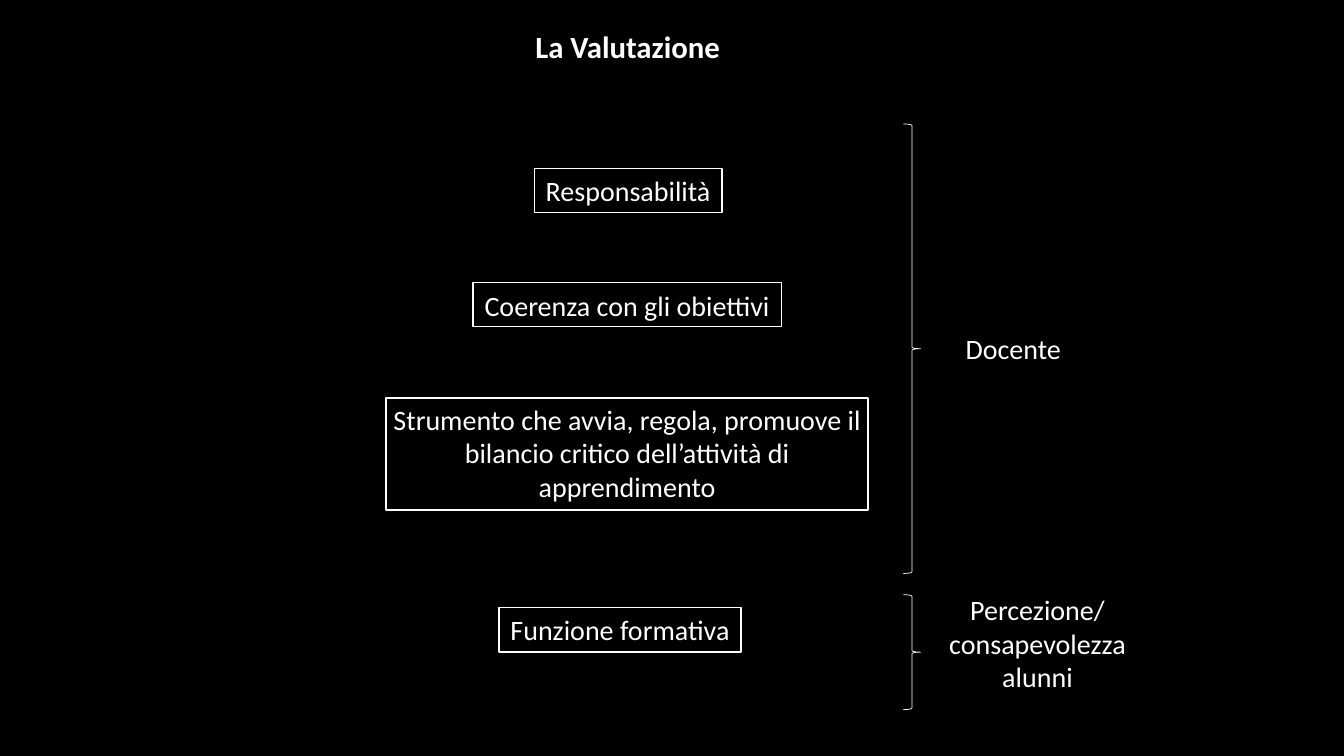
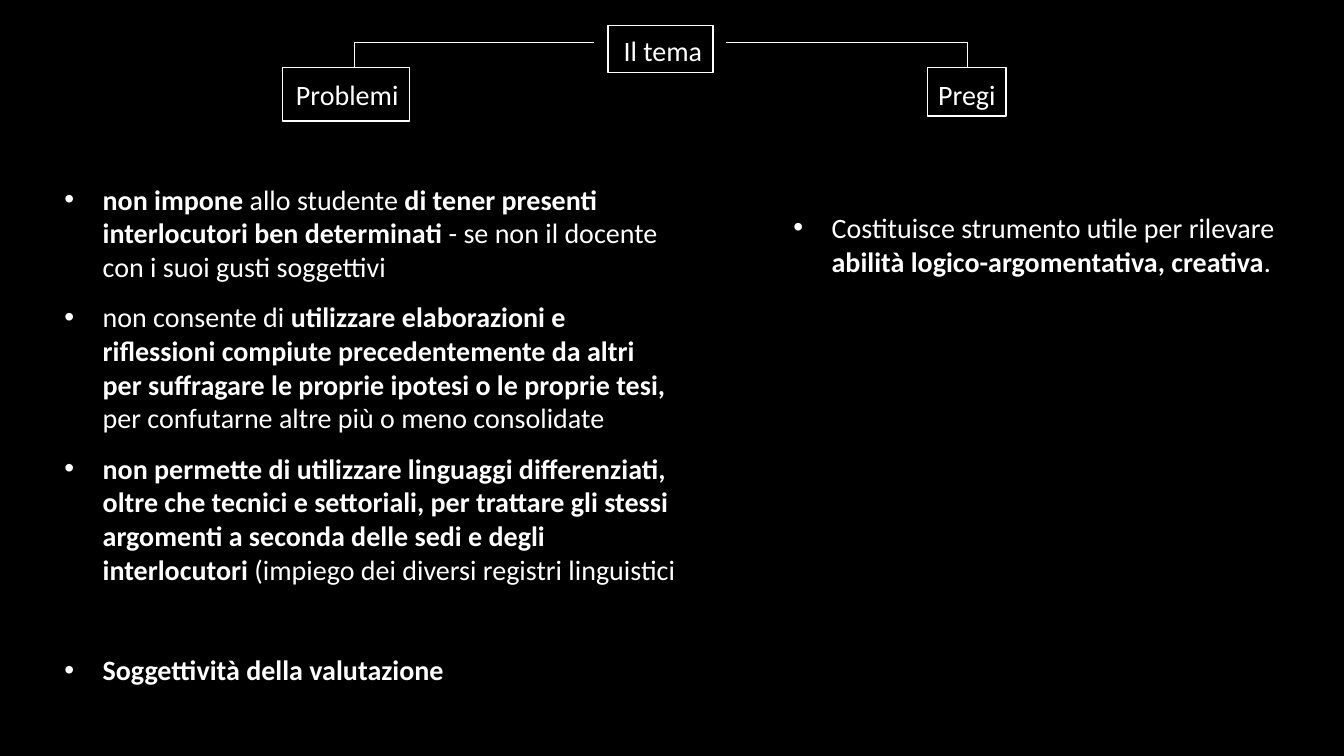
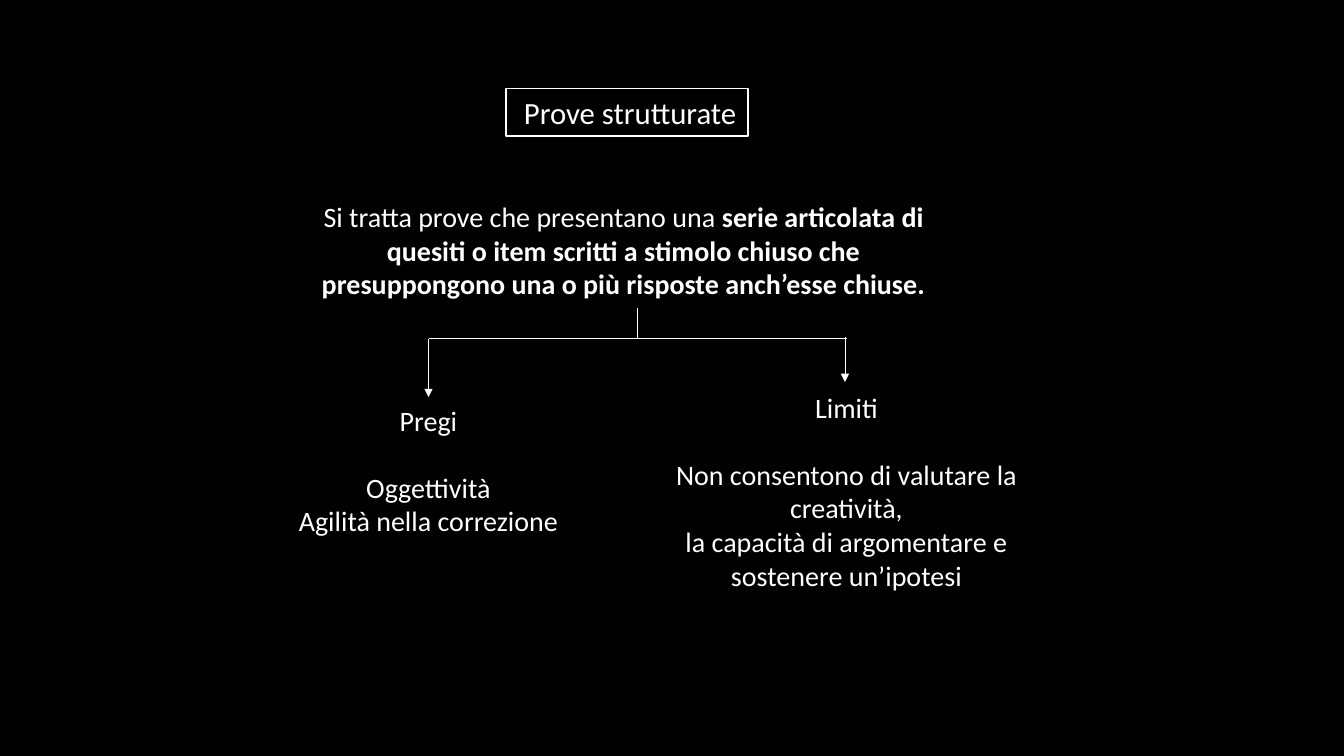
from dataclasses import dataclass

from pptx import Presentation, util as u
from pptx.dml.color import RGBColor
from pptx.enum import shapes, text
from pptx.oxml.ns import qn
from lxml import etree

EMU_PER_PX = 9144
BACKGROUND = "000000"
INK = "FFFFFF"
FONT = "Calibri"
BODY_SIZE = 20
TITLE_SIZE = 22
BLANK_LINE = 24
BULLET_INDENT = 38
FRAME_WIDTH = 1
THIN_WIDTH = 0.5


@dataclass(frozen=True)
class Box:
    left: int
    top: int
    width: int
    height: int


@dataclass(frozen=True)
class Run:
    text: str
    bold: bool = False


@dataclass(frozen=True)
class Paragraph:
    runs: tuple[Run, ...]
    space_before: int = 0
    bullet: bool = False


@dataclass(frozen=True)
class Label:
    box: Box
    text: str
    text_top: int = 5
    text_left: int = 0


@dataclass(frozen=True)
class Title:
    label: Label
    size: int = TITLE_SIZE
    bold: bool = False
    framed: bool = True


@dataclass(frozen=True)
class Line:
    start: tuple[int, int]
    end: tuple[int, int]
    arrow: bool = False


def px(length: int) -> u.Emu:
    return u.Emu(length * EMU_PER_PX)


def colour(value: str) -> RGBColor:
    return RGBColor.from_string(value)


def place(box: Box) -> tuple:
    return px(box.left), px(box.top), px(box.width), px(box.height)


def plain(words: str, space_before: int = 0) -> Paragraph:
    return Paragraph((Run(words),), space_before)


def bullet(*runs: Run, space_before: int = 0) -> Paragraph:
    return Paragraph(runs, space_before, True)


def set_outline(line, width: float) -> None:
    line.color.rgb = colour(INK)
    line.width = u.Pt(width)


def write(frame, paragraphs, size: int = BODY_SIZE, centred: bool = True) -> None:
    frame.word_wrap = True
    frame.auto_size = text.MSO_AUTO_SIZE.NONE
    frame.vertical_anchor = text.MSO_ANCHOR.TOP
    for index, content in enumerate(paragraphs):
        paragraph = frame.add_paragraph() if index else frame.paragraphs[0]
        paragraph.alignment = text.PP_ALIGN.CENTER if centred else text.PP_ALIGN.LEFT
        if content.bullet:
            properties = paragraph._p.get_or_add_pPr()
            properties.set("marL", str(px(BULLET_INDENT)))
            properties.set("indent", str(-px(BULLET_INDENT)))
            etree.SubElement(properties, qn("a:buFont"), typeface="Arial")
            etree.SubElement(properties, qn("a:buChar"), char="•")
        if content.space_before:
            paragraph.space_before = u.Pt(content.space_before)
        for part in content.runs:
            run = paragraph.add_run()
            run.text = part.text
            run.font.name = FONT
            run.font.size = u.Pt(size)
            run.font.bold = part.bold
            run.font.color.rgb = colour(INK)


def write_label(shape, label: Label, size: int = BODY_SIZE, bold: bool = False) -> None:
    frame = shape.text_frame
    frame.margin_left = px(label.text_left)
    frame.margin_top = px(label.text_top)
    frame.margin_right = frame.margin_bottom = 0
    write(frame, [Paragraph((Run(label.text, bold),))], size)


def add_slide(presentation, title: Title):
    slide = presentation.slides.add_slide(presentation.slide_layouts[5])
    shape = slide.shapes.title
    shape.left, shape.top, shape.width, shape.height = place(title.label.box)
    write_label(shape, title.label, title.size, title.bold)
    if title.framed:
        set_outline(shape.line, FRAME_WIDTH)
    return slide


def add_outline(slide, kind, box: Box, width: float):
    shape = slide.shapes.add_shape(kind, *place(box))
    shape.shadow.inherit = False
    shape.fill.background()
    set_outline(shape.line, width)
    return shape


def add_label(slide, label: Label):
    shape = add_outline(slide, shapes.MSO_SHAPE.RECTANGLE, label.box, FRAME_WIDTH)
    write_label(shape, label)
    return shape


def add_text(slide, box: Box, paragraphs, centred: bool = True) -> None:
    write(slide.shapes.add_textbox(*place(box)).text_frame, paragraphs, centred=centred)


def add_line(slide, line: Line):
    connector = slide.shapes.add_connector(
        shapes.MSO_CONNECTOR.STRAIGHT, *map(px, line.start + line.end)
    )
    set_outline(connector.line, THIN_WIDTH)
    if line.arrow:
        etree.SubElement(connector.line._get_or_add_ln(), qn("a:tailEnd"), type="triangle")
    etree.SubElement(connector._element.spPr, qn("a:effectLst"))
    return connector


def build_assessment(presentation) -> None:
    title = Title(Label(Box(520, 22, 205, 47), "La Valutazione"), bold=True, framed=False)
    slide = add_slide(presentation, title)
    for label in (
        Label(Box(530, 167, 186, 44), "Responsabilità"),
        Label(Box(469, 280, 306, 44), "Coerenza con gli obiettivi", 6),
        Label(
            Box(383, 395, 478, 111),
            "Strumento che avvia, regola, promuove il bilancio critico "
            "dell’attività di apprendimento",
            4,
        ),
        Label(Box(495, 603, 240, 44), "Funzione formativa"),
    ):
        add_label(slide, label)
    for top, height in ((123, 446), (590, 114)):
        add_outline(slide, shapes.MSO_SHAPE.RIGHT_BRACE, Box(896, top, 17, height), THIN_WIDTH)
    add_text(slide, Box(937, 324, 136, 44), [plain("Docente")])
    pupils = [plain(words) for words in ("Percezione/", "consapevolezza", "alunni")]
    add_text(slide, Box(862, 583, 334, 111), pupils)


def build_essay(presentation) -> None:
    title = Title(Label(Box(603, 25, 104, 47), "Il tema", 8, 5), BODY_SIZE)
    slide = add_slide(presentation, title)
    add_label(slide, Label(Box(280, 67, 126, 53), "Problemi", 10, 3))
    merits = add_label(slide, Label(Box(920, 67, 78, 48), "Pregi", 10))
    for line in (
        Line((351, 42), (589, 42)),
        Line((351, 42), (351, 67)),
        Line((720, 42), (959, 42)),
    ):
        add_line(slide, line)
    add_line(slide, Line((959, 42), (959, 67))).end_connect(merits, 0)
    problems = [
        bullet(
            Run("non impone ", True),
            Run("allo studente "),
            Run("di tener presenti interlocutori ben determinati", True),
            Run(" - se non il docente con i suoi gusti soggettivi"),
        ),
        bullet(
            Run("non consente di "),
            Run(
                "utilizzare elaborazioni e riflessioni compiute precedentemente da altri "
                "per suffragare le proprie ipotesi o le proprie tesi,",
                True,
            ),
            Run(" per confutarne altre più o meno consolidate"),
            space_before=12,
        ),
        bullet(
            Run(
                "non permette di utilizzare linguaggi differenziati, oltre che tecnici e "
                "settoriali, per trattare gli stessi argomenti a seconda delle sedi e degli "
                "interlocutori",
                True,
            ),
            Run(" (impiego dei diversi registri linguistici"),
            space_before=12,
        ),
        bullet(Run("Soggettività della valutazione", True), space_before=BLANK_LINE + 24),
    ]
    add_text(slide, Box(54, 176, 629, 515), problems, centred=False)
    strengths = bullet(
        Run("Costituisce strumento utile per rilevare "),
        Run("abilità logico-argomentativa, creativa", True),
        Run("."),
    )
    add_text(slide, Box(777, 204, 532, 77), [strengths], centred=False)


def build_structured_tests(presentation) -> None:
    title = Title(Label(Box(502, 88, 240, 47), "Prove strutturate", 5, 6))
    slide = add_slide(presentation, title)
    definition = Paragraph((
        Run("Si tratta prove che presentano una "),
        Run(
            "serie articolata di quesiti o item scritti a stimolo chiuso che "
            "presuppongono una o più risposte anch’esse chiuse.",
            True,
        ),
    ))
    add_text(slide, Box(285, 193, 667, 111), [definition])
    merits = [
        plain("Pregi"),
        plain("Oggettività", BLANK_LINE),
        plain("Agilità nella correzione"),
    ]
    add_text(slide, Box(275, 395, 300, 145), merits)
    limits = [
        plain("Limiti"),
        plain("Non consentono di valutare la creatività,", BLANK_LINE),
        plain("la capacità di argomentare e"),
        plain("sostenere un’ipotesi"),
    ]
    add_text(slide, Box(655, 382, 369, 212), limits)
    for line in (
        Line((632, 336), (632, 306)),
        Line((425, 336), (840, 336)),
        Line((425, 336), (425, 394), True),
        Line((838, 334), (838, 379), True),
    ):
        add_line(slide, line)


def main() -> None:
    presentation = Presentation()
    presentation.slide_width = px(1333)
    presentation.slide_height = px(750)
    background = presentation.slide_master.background.fill
    background.solid()
    background.fore_color.rgb = colour(BACKGROUND)
    build_assessment(presentation)
    build_essay(presentation)
    build_structured_tests(presentation)
    presentation.save("out.pptx")


if __name__ == "__main__":
    main()
